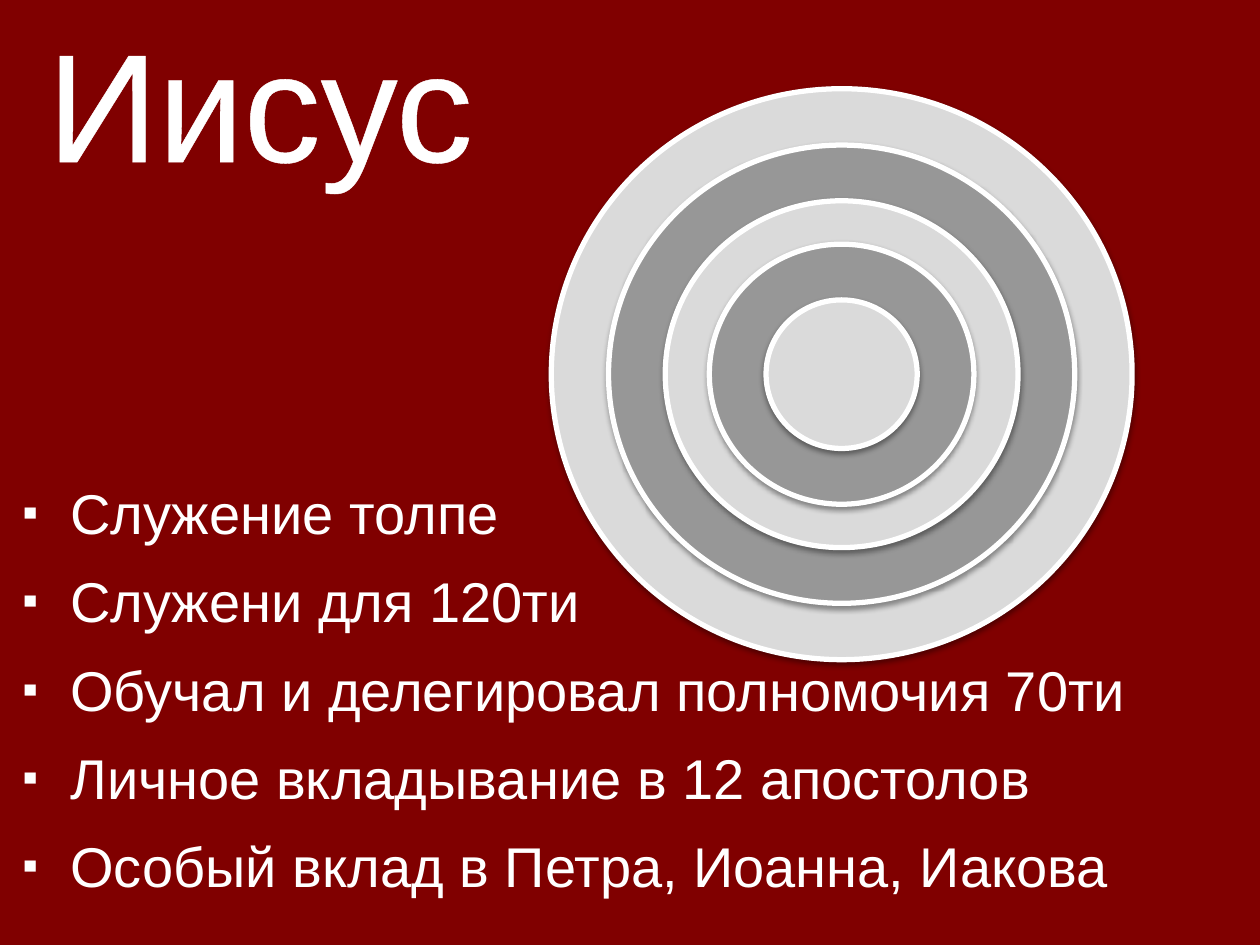
from dataclasses import dataclass

from lxml import etree
from pptx import Presentation
from pptx.dml.color import RGBColor
from pptx.enum.shapes import MSO_SHAPE
from pptx.enum.text import MSO_ANCHOR, MSO_AUTO_SIZE, PP_ALIGN
from pptx.oxml import parse_xml
from pptx.oxml.ns import nsdecls, qn
from pptx.util import Inches, Pt

OVAL = MSO_SHAPE.OVAL
CENTER, LEFT = PP_ALIGN.CENTER, PP_ALIGN.LEFT
TOP, BOTTOM = MSO_ANCHOR.TOP, MSO_ANCHOR.BOTTOM
GROW, FIXED = MSO_AUTO_SIZE.SHAPE_TO_FIT_TEXT, MSO_AUTO_SIZE.NONE


@dataclass(frozen=True)
class Theme:
    background: str = "800000"
    text: str = "FFFFFF"
    light_ring: str = "DADADA"
    dark_ring: str = "979797"
    font: str = "Arial"
    title_size: float = 88
    body_size: float = 32
    title_outline: float = 1.45
    ring_outline: float = 3


class SlideBuilder:
    def __init__(self, slide, theme):
        self.slide = slide
        self.theme = theme

    def background(self):
        fill = self.slide.background.fill
        fill.solid()
        fill.fore_color.rgb = RGBColor.from_string(self.theme.background)

    def text_frame(self, left, top, width, height, anchor, auto_size):
        shape = self.slide.shapes.add_textbox(
            Inches(left), Inches(top), Inches(width), Inches(height))
        frame = shape.text_frame
        frame.word_wrap = True
        frame.auto_size = auto_size
        frame.vertical_anchor = anchor
        return frame

    def add_run(self, paragraph, text, size):
        run = paragraph.add_run()
        run.text = text
        run.font.name = self.theme.font
        run.font.size = Pt(size)
        run.font.color.rgb = RGBColor.from_string(self.theme.text)
        return run

    def title(self, text, left, top, width, height):
        paragraph = self.text_frame(left, top, width, height, BOTTOM, GROW).paragraphs[0]
        paragraph.alignment = CENTER
        run = self.add_run(paragraph, text, self.theme.title_size)
        outline = parse_xml(
            f'<a:ln {nsdecls("a")} w="{Pt(self.theme.title_outline)}"><a:solidFill>'
            f'<a:srgbClr val="{self.theme.text}"/></a:solidFill></a:ln>')
        run.font._element.insert(0, outline)

    def bullets(self, lines, left, top, width, height, indent):
        frame = self.text_frame(left, top, width, height, TOP, FIXED)
        for index, line in enumerate(lines):
            paragraph = frame.add_paragraph() if index else frame.paragraphs[0]
            paragraph.alignment = LEFT
            paragraph.space_after = Pt(12)
            properties = paragraph._p.get_or_add_pPr()
            properties.set("marL", str(Inches(indent)))
            properties.set("indent", str(-Inches(indent)))
            etree.SubElement(properties, qn("a:buSzPct"), val="80000")
            etree.SubElement(properties, qn("a:buFont"), typeface=self.theme.font)
            etree.SubElement(properties, qn("a:buChar"), char="▪")
            self.add_run(paragraph, line, self.theme.body_size)

    def ring(self, center_x, center_y, width, height, color):
        shape = self.slide.shapes.add_shape(
            OVAL, Inches(center_x - width / 2), Inches(center_y - height / 2),
            Inches(width), Inches(height))
        shape.fill.solid()
        shape.fill.fore_color.rgb = RGBColor.from_string(color)
        shape.line.color.rgb = RGBColor.from_string(self.theme.text)
        shape.line.width = Pt(self.theme.ring_outline)
        shape.shadow.inherit = False
        effects = shape._element.spPr.find(qn("a:effectLst"))
        effects.append(parse_xml(
            f'<a:outerShdw {nsdecls("a")} blurRad="{Pt(3.1)}" dist="{Pt(1.6)}" '
            'dir="5400000" rotWithShape="0"><a:srgbClr val="000000">'
            '<a:alpha val="38000"/></a:srgbClr></a:outerShdw>'))


def main():
    presentation = Presentation()
    presentation.slide_width = Inches(10)
    presentation.slide_height = Inches(7.5)
    slide = presentation.slides.add_slide(presentation.slide_layouts[6])
    theme = Theme()
    builder = SlideBuilder(slide, theme)

    builder.background()
    builder.bullets(
        ["Служение толпе", "Служени для 120ти", "Обучал и делегировал полномочия 70ти",
         "Личное вкладывание в 12 апостолов", "Особый вклад в Петра, Иоанна, Иакова"],
        0.08, 3.75, 9.33, 3.75, indent=0.38)
    builder.title("Иисус", 0, 0, 4.13, 1.58)

    ring_colors = (theme.light_ring, theme.dark_ring)
    height_ratio = 0.983
    for index, diameter in enumerate((4.61, 3.7, 2.8, 2.1, 1.2)):
        builder.ring(6.68, 2.97, diameter, diameter * height_ratio, ring_colors[index % 2])

    presentation.save("out.pptx")


if __name__ == "__main__":
    main()
